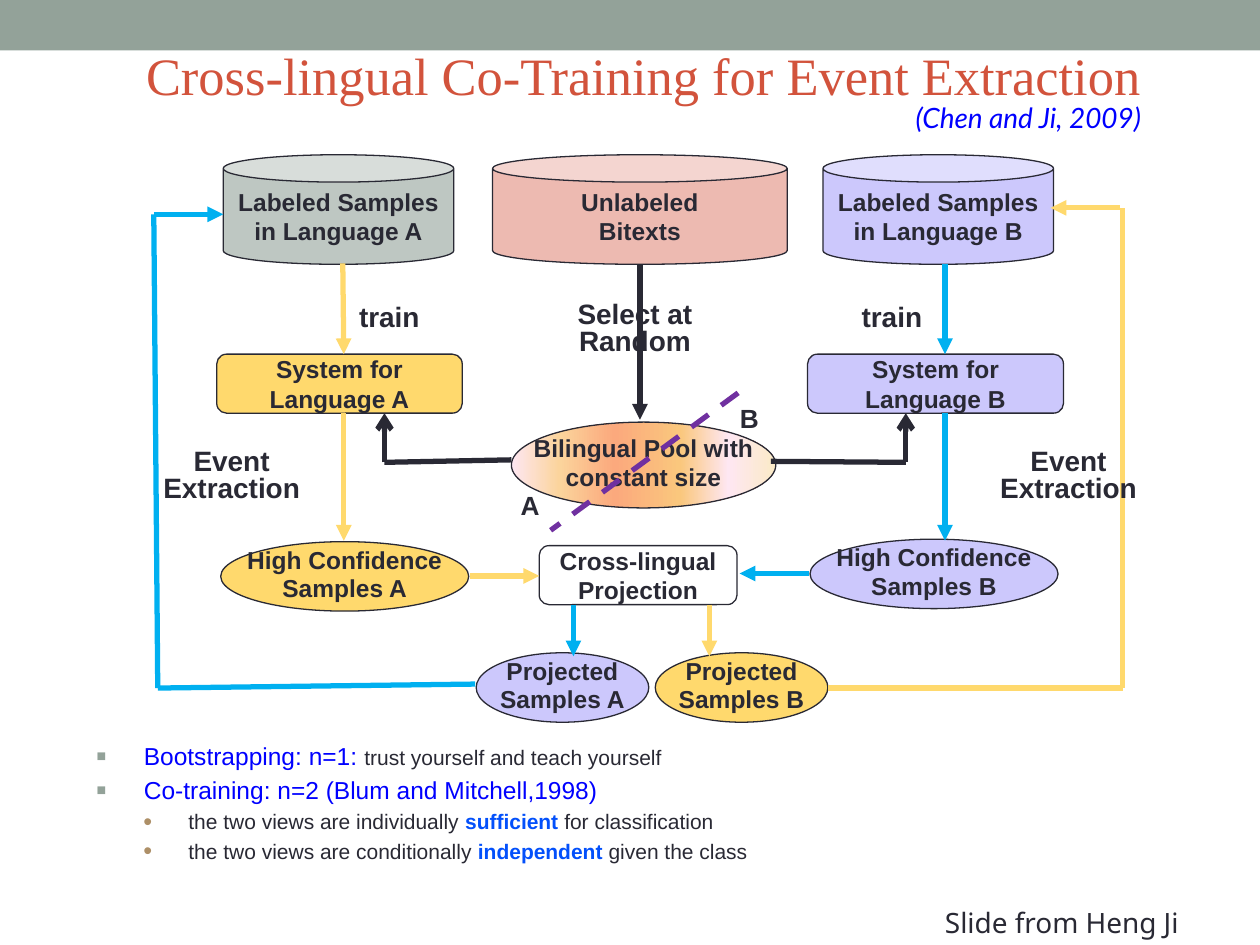
import dataclasses
from typing import NamedTuple, Optional

import lxml.etree
import pptx
import pptx.dml.color
import pptx.enum.dml
import pptx.enum.shapes
import pptx.enum.text
import pptx.oxml.ns
import pptx.util

Cm, Pt = pptx.util.Cm, pptx.util.Pt
Shape = pptx.enum.shapes.MSO_SHAPE
Align = pptx.enum.text.PP_ALIGN
Anchor = pptx.enum.text.MSO_ANCHOR
qn = pptx.oxml.ns.qn


@dataclasses.dataclass(frozen=True)
class Theme:
    ink: str = "292934"
    band: str = "93A299"
    title: str = "D2533C"
    white: str = "FFFFFF"
    blue: str = "0000FF"
    emphasis: str = "0350FB"
    grey: str = "BEC7C2"
    rose: str = "EDBAB1"
    lilac: str = "CCC8FC"
    yellow: str = "FFD96D"
    cyan: str = "00B0F0"
    purple: str = "7030A0"
    dot: str = "AD8F67"
    pool: tuple = ((0, "FEE7F2"), (18, "FBD49C"), (39, "FBA97D"),
                   (64, "FAC77D"), (82, "FEE7F2"), (100, "FBEAC7"))
    font: str = "Arial"
    title_size: int = 30
    label_size: int = 16
    letter_size: int = 15
    node_size: int = 14
    detail_size: int = 12


THEME = Theme()


class Node(NamedTuple):
    kind: Shape
    box: tuple
    lines: tuple
    fill: Optional[str]


class Link(NamedTuple):
    start: tuple
    end: tuple
    color: str
    arrow: Optional[str] = "triangle"
    dashed: bool = False


class Label(NamedTuple):
    text: str
    box: tuple
    size: int = THEME.label_size


class Point(NamedTuple):
    level: int
    runs: tuple  # (text, size, colour, bold)


def rgb(color: str):
    return pptx.dml.color.RGBColor.from_string(color)


def style(font, size: int, color: str, name: str = THEME.font, bold=None, italic=None) -> None:
    font.name, font.size, font.bold, font.italic = name, Pt(size), bold, italic
    font.color.rgb = rgb(color)


def add_centred(frame, lines: tuple, size: int, tight: bool) -> None:
    frame.word_wrap = False
    frame.vertical_anchor = Anchor.MIDDLE
    for index, line in enumerate(lines):
        paragraph = frame.add_paragraph() if index else frame.paragraphs[0]
        paragraph.text = line
        paragraph.alignment = Align.CENTER
        if tight:
            paragraph.line_spacing = 0.8
            paragraph.space_before = Pt(0.2 * size)
        style(paragraph.font, size, THEME.ink, bold=True)


def fill_gradient(shape, stops: tuple) -> None:
    shape.fill.gradient()
    shape.fill.gradient_angle = 0
    stop_list = shape._element.spPr.find(qn("a:gradFill")).find(qn("a:gsLst"))
    for stop in list(stop_list):
        stop_list.remove(stop)
    for percent, color in stops:
        stop = lxml.etree.SubElement(stop_list, qn("a:gs"), pos=str(percent * 1000))
        lxml.etree.SubElement(stop, qn("a:srgbClr"), val=color)


def add_node(slide, node: Node) -> None:
    shape = slide.shapes.add_shape(node.kind, *map(Cm, node.box))
    shape.shadow.inherit = False
    if node.fill is None:
        shape.fill.background()
    elif node.fill == "pool":
        fill_gradient(shape, THEME.pool)
    else:
        shape.fill.solid()
        shape.fill.fore_color.rgb = rgb(node.fill)
    shape.line.color.rgb = rgb(THEME.ink)
    shape.line.width = Pt(0.75)
    add_centred(shape.text_frame, node.lines, THEME.node_size, node.kind == Shape.OVAL)


def add_link(slide, link: Link) -> None:
    connector = slide.shapes.add_connector(
        pptx.enum.shapes.MSO_CONNECTOR.STRAIGHT, *map(Cm, link.start + link.end))
    connector.line.color.rgb = rgb(link.color)
    connector.line.width = Pt(3)
    if link.dashed:
        connector.line.dash_style = pptx.enum.dml.MSO_LINE.DASH
    properties = connector._element.spPr
    if link.arrow:
        lxml.etree.SubElement(properties.find(qn("a:ln")), qn("a:tailEnd"), type=link.arrow)
    lxml.etree.SubElement(properties, qn("a:effectLst"))


def add_label(slide, label: Label) -> None:
    box = slide.shapes.add_textbox(*map(Cm, label.box))
    add_centred(box.text_frame, (label.text,), label.size, True)


def add_note(slide, text: str, box: tuple, font: str, color: str, italic: bool) -> None:
    frame = slide.shapes.add_textbox(*map(Cm, box)).text_frame
    frame.word_wrap = False
    frame.text = text
    style(frame.paragraphs[0].font, THEME.label_size, color, font, italic=italic)


def add_point(paragraph, point: Point) -> None:
    paragraph.level = point.level
    paragraph.space_before = Pt(0.2 * point.runs[0][1])
    for text, size, color, bold in point.runs:
        run = paragraph.add_run()
        run.text = text
        style(run.font, size, color, bold=bold)
    color, percent, mark, margin, hang = (
        (THEME.band, 65, "■", 0.95, 0.95), (THEME.dot, 120, "•", 1.85, 0.91))[point.level]
    properties = paragraph._p.get_or_add_pPr()
    properties.set("marL", str(Cm(margin)))
    properties.set("indent", str(-Cm(hang)))
    bullet_color = lxml.etree.SubElement(properties, qn("a:buClr"))
    lxml.etree.SubElement(bullet_color, qn("a:srgbClr"), val=color)
    lxml.etree.SubElement(properties, qn("a:buSzPct"), val=str(percent * 1000))
    lxml.etree.SubElement(properties, qn("a:buFont"), typeface=THEME.font)
    lxml.etree.SubElement(properties, qn("a:buChar"), char=mark)


T = THEME
NODES = (
    Node(Shape.CAN, (9.93, 3.12, 5.94, 2.21), ("Unlabeled", "Bitexts"), T.rose),
    Node(Shape.CAN, (4.5, 3.12, 4.65, 2.21), ("Labeled Samples", "in Language A"), T.grey),
    Node(Shape.CAN, (16.59, 3.12, 4.65, 2.21), ("Labeled Samples", "in Language B"), T.lilac),
    Node(Shape.ROUNDED_RECTANGLE, (4.37, 7.14, 4.95, 1.19), ("System for", "Language A"), T.yellow),
    Node(Shape.ROUNDED_RECTANGLE, (16.28, 7.14, 5.16, 1.19), ("System for", "Language B"), T.lilac),
    Node(Shape.ROUNDED_RECTANGLE, (10.87, 11, 3.99, 1.19), ("Cross-lingual", "Projection"), None),
    Node(Shape.OVAL, (9.6, 13.16, 3.48, 1.4), ("Projected", "Samples A"), T.lilac),
    Node(Shape.OVAL, (13.21, 13.16, 3.48, 1.4), ("Projected", "Samples B"), T.yellow),
    Node(Shape.OVAL, (4.45, 10.92, 5, 1.4), ("High Confidence", "Samples A"), T.yellow),
    Node(Shape.OVAL, (16.33, 10.87, 5, 1.4), ("High Confidence", "Samples B"), T.lilac),
    Node(Shape.OVAL, (10.31, 8.51, 5.33, 1.73), ("Bilingual Pool with", "constant size"), "pool"),
)
LINKS = (
    # Training and extraction, top to bottom
    Link((6.91, 5.31), (6.93, 7.14), T.yellow),
    Link((19.05, 5.33), (19.05, 7.14), T.cyan),
    Link((6.93, 8.33), (6.93, 10.9), T.yellow),
    Link((19.05, 8.33), (19.05, 10.9), T.cyan),
    # Projection across languages
    Link((9.47, 11.61), (10.87, 11.61), T.yellow),
    Link((16.31, 11.56), (14.91, 11.56), T.cyan),
    Link((11.56, 12.19), (11.56, 13.23), T.cyan),
    Link((14.3, 12.19), (14.3, 13.23), T.yellow),
    # Feedback to the labeled samples
    Link((9.58, 13.79), (3.18, 13.87), T.cyan, None),
    Link((3.18, 13.87), (3.1, 4.32), T.cyan, None),
    Link((3.1, 4.32), (4.5, 4.32), T.cyan),
    Link((16.69, 13.87), (22.63, 13.87), T.yellow, None),
    Link((22.63, 13.87), (22.63, 4.19), T.yellow, None),
    Link((22.58, 4.19), (21.18, 4.19), T.yellow),
    # Bilingual pool
    Link((12.9, 5.33), (12.9, 8.46), T.ink),
    Link((10.31, 9.27), (7.75, 9.32), T.ink, None),
    Link((7.75, 9.32), (7.75, 8.33), T.ink, "arrow"),
    Link((15.54, 9.3), (18.26, 9.32), T.ink, None),
    Link((18.26, 9.32), (18.26, 8.33), T.ink, "arrow"),
    Link((14.88, 7.92), (11.1, 10.69), T.purple, None, True),
)
LABELS = (
    Label("train", (6.15, 5.94, 3.4, 0.99)),
    Label("train", (16.28, 5.94, 3.4, 0.99)),
    Label("Event Extraction", (2.97, 9.12, 3.4, 0.99)),
    Label("Event Extraction", (19.84, 9.12, 3.4, 0.99)),
    Label("Select at Random", (11.1, 6.15, 3.4, 0.99)),
    Label("A", (10.19, 9.83, 0.99, 0.81), T.letter_size),
    Label("B", (14.61, 8.08, 0.99, 0.81), T.letter_size),
)
POINTS = (
    Point(0, (("Bootstrapping: n=1: ", T.node_size, T.blue, None),
              ("trust yourself and teach yourself", T.detail_size, T.ink, None))),
    Point(0, (("Co-training: n=2 (Blum and Mitchell,1998)", T.node_size, T.blue, None),)),
) + tuple(
    Point(1, ((f"the two views are {manner} ", T.detail_size, T.ink, None),
              (key, T.detail_size, T.emphasis, True),
              (rest, T.detail_size, T.ink, None)))
    for manner, key, rest in (("individually", "sufficient", " for classification"),
                              ("conditionally", "independent", " given the class")))


def main() -> None:
    deck = pptx.Presentation()
    deck.slide_width, deck.slide_height = Cm(25.4), Cm(19.05)
    slide = deck.slides.add_slide(deck.slide_layouts[5])

    # Top band and title
    band = slide.shapes.add_shape(Shape.RECTANGLE, 0, 0, deck.slide_width, Cm(1.02))
    band.shadow.inherit = False
    band.fill.solid()
    band.fill.fore_color.rgb = rgb(T.band)
    band.line.fill.background()
    title = slide.shapes.title
    title.left, title.top, title.width, title.height = map(Cm, (2.69, 0.74, 22.86, 3.18))
    title.width = deck.slide_width - title.left
    title.text_frame.text = "Cross-lingual Co-Training for Event Extraction"
    title.text_frame.vertical_anchor = Anchor.TOP
    title.text_frame.auto_size = pptx.enum.text.MSO_AUTO_SIZE.NONE
    heading = title.text_frame.paragraphs[0]
    heading.alignment = Align.LEFT
    style(heading.font, T.title_size, T.title, "Times New Roman")

    # Co-training diagram
    for node in NODES:
        add_node(slide, node)
    for link in LINKS:
        add_link(slide, link)
    for label in LABELS:
        add_label(slide, label)

    # Takeaways
    takeaways = slide.shapes.add_textbox(*map(Cm, (1.7, 14.81, 22.23, 4.24))).text_frame
    takeaways.word_wrap = True
    for index, point in enumerate(POINTS):
        add_point(takeaways.add_paragraph() if index else takeaways.paragraphs[0], point)

    # Citation and credit
    add_note(slide, "(Chen and Ji, 2009)", (18.21, 1.91, 5.44, 0.94), "Lato", T.blue, True)
    add_note(slide, "Slide from Heng Ji", (18.8, 18.14, 5.49, 0.91), "Noto Sans", T.ink, False)
    deck.save("out.pptx")


if __name__ == "__main__":
    main()
